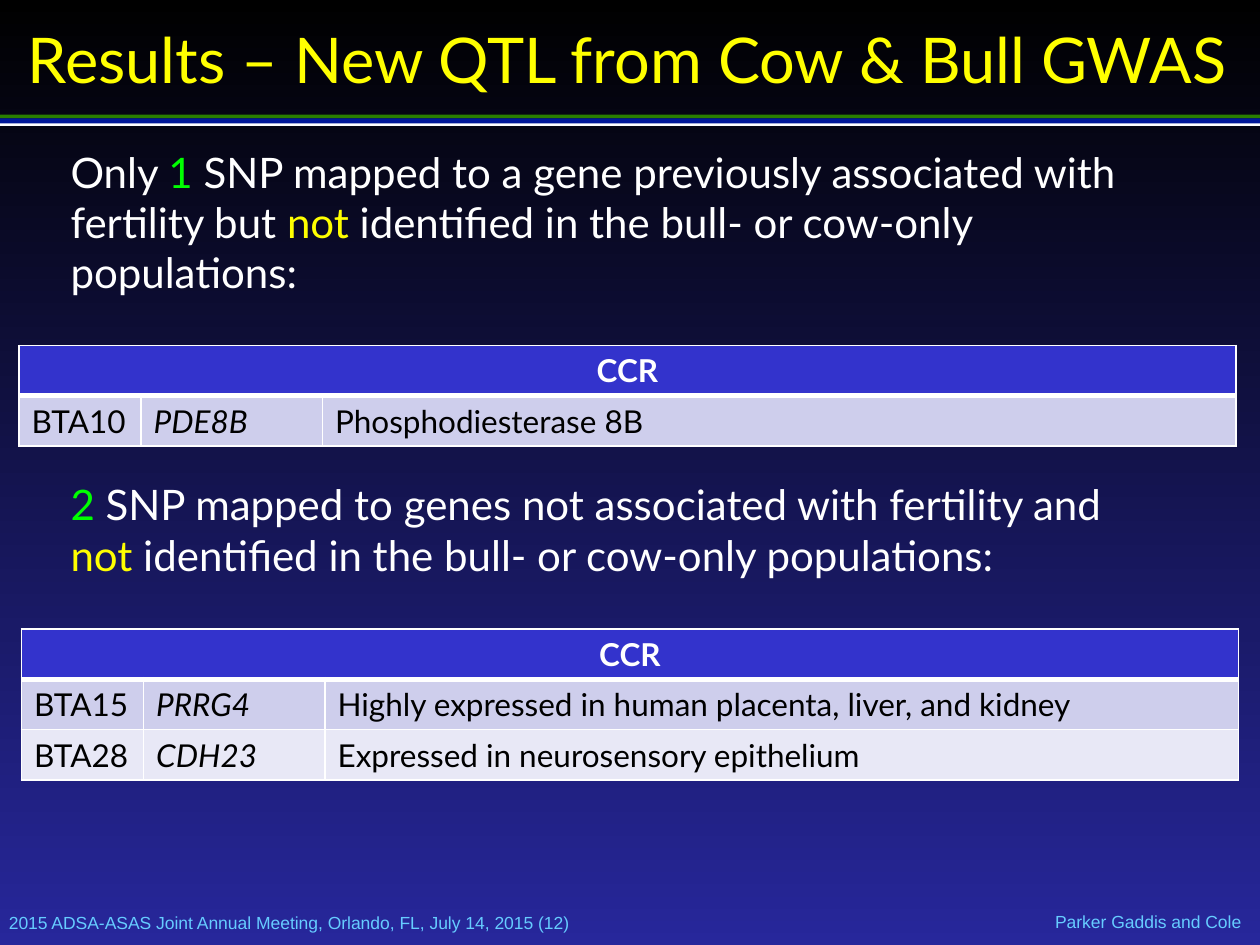
from dataclasses import dataclass

import lxml.etree
import pptx
import pptx.dml.color
import pptx.enum.shapes
import pptx.enum.text
import pptx.oxml.ns
import pptx.util
from pptx.util import Inches

RGB = pptx.dml.color.RGBColor.from_string
ALIGN = pptx.enum.text.PP_ALIGN
ANCHOR = pptx.enum.text.MSO_ANCHOR
AUTO_SIZE = pptx.enum.text.MSO_AUTO_SIZE
qn = pptx.oxml.ns.qn


@dataclass(frozen=True)
class Theme:
    font: str = "Lato"
    footer_font: str = "Arial"
    title_size: int = 36
    statement_size: int = 24
    table_size: int = 18
    footer_size: int = 10
    sky_top: str = "000000"
    sky_bottom: str = "27279B"
    white: str = "FFFFFF"
    black: str = "000000"
    yellow: str = "FFFF00"
    green: str = "00FF00"
    footer: str = "66CCFF"
    rule_green: str = "2A7E00"
    rule_blue: str = "001799"
    header: str = "3333CC"
    bands: tuple[str, str] = ("CECEEC", "E8E8F6")


THEME = Theme()


@dataclass(frozen=True)
class Box:
    left: float
    top: float
    width: float
    height: float

    def lengths(self) -> tuple:
        return tuple(map(Inches, (self.left, self.top, self.width, self.height)))


@dataclass(frozen=True)
class Rule:
    box: Box
    color: str


@dataclass(frozen=True)
class Footer:
    box: Box
    text: str
    align: ALIGN


@dataclass(frozen=True)
class Statement:
    box: Box
    phrases: tuple[tuple[str, str], ...]


@dataclass(frozen=True)
class GeneTable:
    left: float
    top: float
    trait: str
    genes: tuple[tuple[str, str, str], ...]


COLUMN_WIDTHS = (0.97, 1.44, 7.25)
ROW_HEIGHT = 0.4

TITLE = "Results – New QTL from Cow & Bull GWAS"
TITLE_BOX = Box(0.17, 0, 9.66, 0.92)

RULES = (
    Rule(Box(0, 0.91, 10, 0.03), THEME.rule_green),
    Rule(Box(0, 0.97, 10, 0.03), THEME.white),
    Rule(Box(0, 0.94, 10, 0.04), THEME.rule_blue),
)
FOOTERS = (
    Footer(Box(7.96, 7.23, 1.89, 0.17), "Parker Gaddis and Cole", ALIGN.RIGHT),
    Footer(Box(0.07, 7.24, 8.09, 0.17),
           "2015 ADSA-ASAS Joint Annual Meeting, Orlando, FL, July 14, 2015 (12)",
           ALIGN.LEFT),
)
STATEMENTS = (
    Statement(Box(0.51, 1.11, 8.83, 1.4), (
        ("Only ", THEME.white),
        ("1", THEME.green),
        (" SNP mapped to a gene previously associated with fertility but ", THEME.white),
        ("not", THEME.yellow),
        (" identified in the bull- or cow-only populations:", THEME.white),
    )),
    Statement(Box(0.51, 3.75, 8.83, 1), (
        ("2", THEME.green),
        (" SNP mapped to genes not associated with fertility and ", THEME.white),
        ("not ", THEME.yellow),
        ("identified in the bull- or cow-only populations:", THEME.white),
    )),
)
GENE_TABLES = (
    GeneTable(0.15, 2.74, "CCR", (("BTA10", "PDE8B", "Phosphodiesterase 8B"),)),
    GeneTable(0.17, 4.99, "CCR", (
        ("BTA15", "PRRG4", "Highly expressed in human placenta, liver, and kidney"),
        ("BTA28", "CDH23", "Expressed in neurosensory epithelium"),
    )),
)


def style(run, size: int, color: str, font: str = THEME.font,
          bold: bool = False, italic: bool = False) -> None:
    run.font.name = font
    run.font.size = pptx.util.Pt(size)
    run.font.color.rgb = RGB(color)
    run.font.bold = bold
    run.font.italic = italic


def set_insets(frame, inset: float) -> None:
    frame.margin_left = frame.margin_right = Inches(inset)
    frame.margin_top = frame.margin_bottom = Inches(inset)


def place(shape, box: Box) -> None:
    shape.left, shape.top, shape.width, shape.height = box.lengths()


def draw_background(slide) -> None:
    fill = slide.background.fill
    fill.gradient()
    fill.gradient_angle = 270
    for stop, color in zip(fill.gradient_stops, (THEME.sky_top, THEME.sky_bottom)):
        stop.color.rgb = RGB(color)


def draw_rule(slide, rule: Rule) -> None:
    bar = slide.shapes.add_shape(
        pptx.enum.shapes.MSO_SHAPE.RECTANGLE, *rule.box.lengths())
    bar.shadow.inherit = False
    bar.fill.solid()
    bar.fill.fore_color.rgb = RGB(rule.color)
    bar.line.fill.background()


def draw_footer(slide, footer: Footer) -> None:
    frame = slide.shapes.add_textbox(*footer.box.lengths()).text_frame
    frame.word_wrap = True
    frame.auto_size = AUTO_SIZE.SHAPE_TO_FIT_TEXT
    frame.vertical_anchor = ANCHOR.MIDDLE
    set_insets(frame, 0)
    frame.text = footer.text
    line = frame.paragraphs[0]
    line.alignment = footer.align
    line.space_before = pptx.util.Pt(6)
    style(line.runs[0], THEME.footer_size, THEME.footer, THEME.footer_font)


def fill_title(title) -> None:
    place(title, TITLE_BOX)
    frame = title.text_frame
    frame.text = TITLE
    frame.auto_size = AUTO_SIZE.NONE
    frame.vertical_anchor = ANCHOR.MIDDLE
    set_insets(frame, 0.05)
    frame.paragraphs[0].alignment = ALIGN.LEFT
    style(frame.paragraphs[0].runs[0], THEME.title_size, THEME.yellow)


def fill_statement(body, statement: Statement) -> None:
    place(body, statement.box)
    frame = body.text_frame
    frame.auto_size = AUTO_SIZE.NONE
    set_insets(frame, 0.05)
    sentence = frame.paragraphs[0]
    sentence.space_before = pptx.util.Pt(16)
    for words, color in statement.phrases:
        run = sentence.add_run()
        run.text = words
        style(run, THEME.statement_size, color)
    properties = sentence._p.get_or_add_pPr()
    properties.set("marL", "0")
    properties.set("indent", "0")
    lxml.etree.SubElement(properties, qn("a:buNone"))


def set_borders(cell, top: int, bottom: int) -> None:
    properties = cell._tc.get_or_add_tcPr()
    for order, (side, points) in enumerate(
            (("L", 1), ("R", 1), ("T", top), ("B", bottom))):
        border = lxml.etree.Element(qn(f"a:ln{side}"), w=str(pptx.util.Pt(points)))
        solid = lxml.etree.SubElement(border, qn("a:solidFill"))
        lxml.etree.SubElement(solid, qn("a:srgbClr"), val=THEME.white)
        properties.insert(order, border)


def draw_gene_table(slide, content: GeneTable) -> None:
    rows = ((content.trait, "", ""), *content.genes)
    box = Box(content.left, content.top, sum(COLUMN_WIDTHS), ROW_HEIGHT * len(rows))
    table = slide.shapes.add_table(
        len(rows), len(COLUMN_WIDTHS), *box.lengths()).table
    for column, width in zip(table.columns, COLUMN_WIDTHS):
        column.width = Inches(width)
    table.cell(0, 0).merge(table.cell(0, len(COLUMN_WIDTHS) - 1))
    for r, values in enumerate(rows):
        header = r == 0
        for c, value in enumerate(values):
            cell = table.cell(r, c)
            cell.fill.solid()
            cell.fill.fore_color.rgb = RGB(
                THEME.header if header else THEME.bands[(r - 1) % 2])
            set_borders(cell, top=3 if r == 1 else 1, bottom=3 if header else 1)
            if not value:
                continue
            cell.text_frame.text = value
            line = cell.text_frame.paragraphs[0]
            line.alignment = ALIGN.CENTER if header else ALIGN.LEFT
            style(line.runs[0], THEME.table_size,
                  THEME.white if header else THEME.black,
                  bold=header, italic=not header and c == 1)


def main() -> None:
    deck = pptx.Presentation()
    deck.slide_width, deck.slide_height = Inches(10), Inches(7.5)
    slide = deck.slides.add_slide(deck.slide_layouts.get_by_name("Two Content"))
    title, *bodies = slide.placeholders
    draw_background(slide)
    for rule in RULES:
        draw_rule(slide, rule)
    for footer in FOOTERS:
        draw_footer(slide, footer)
    fill_title(title)
    for body, statement in zip(bodies, STATEMENTS):
        fill_statement(body, statement)
    for content in GENE_TABLES:
        draw_gene_table(slide, content)
    deck.save("out.pptx")


if __name__ == "__main__":
    main()
